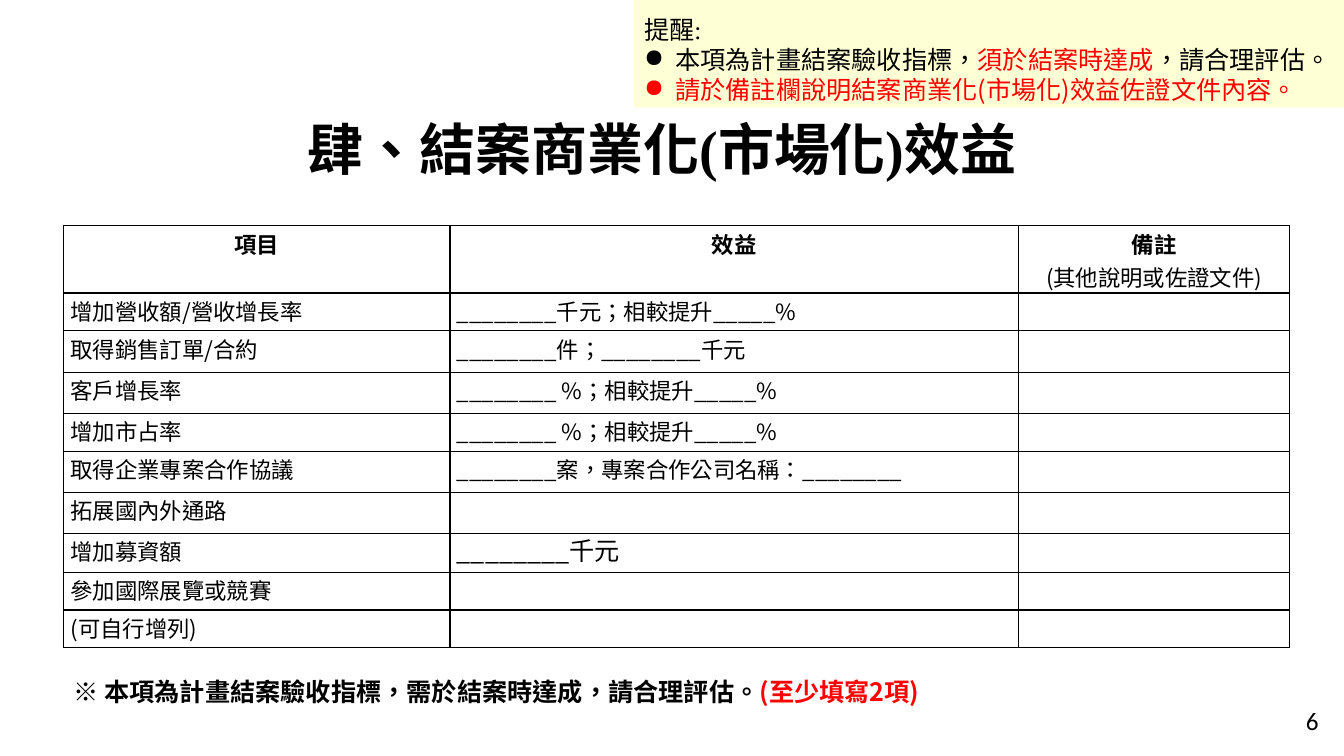
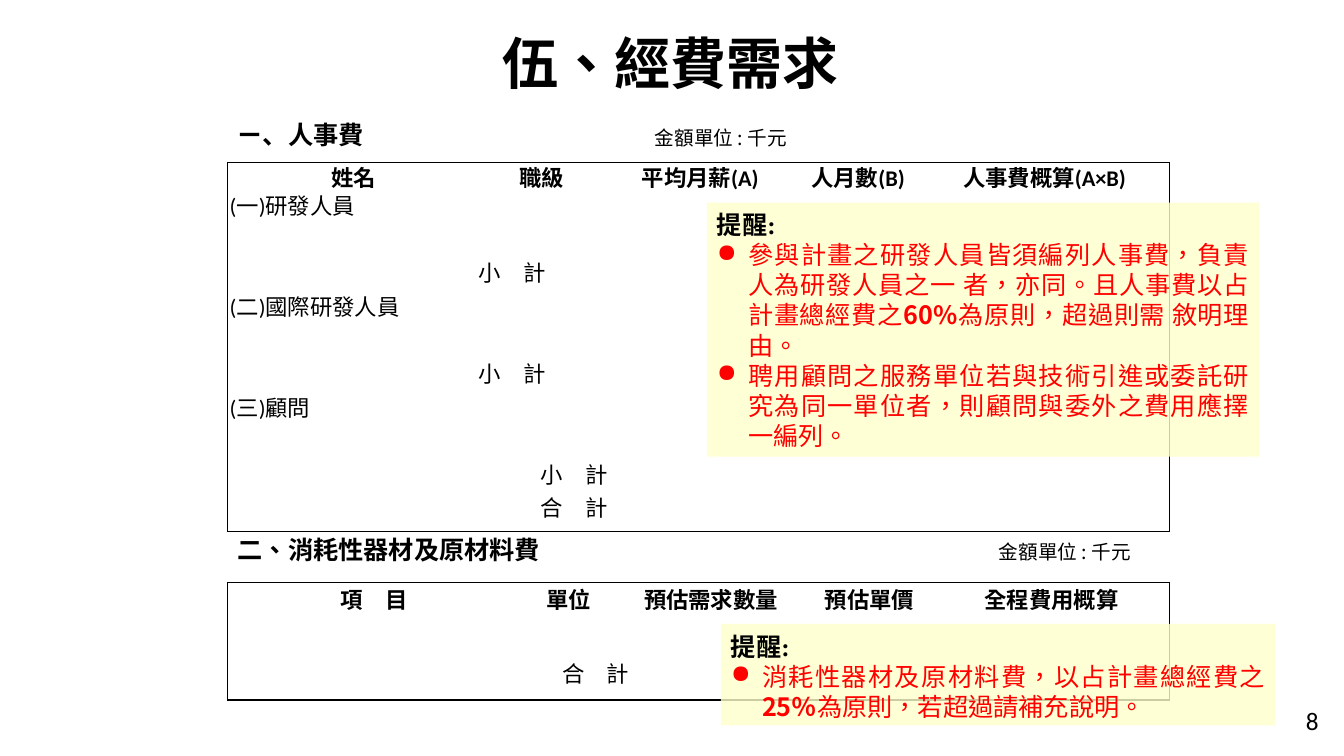
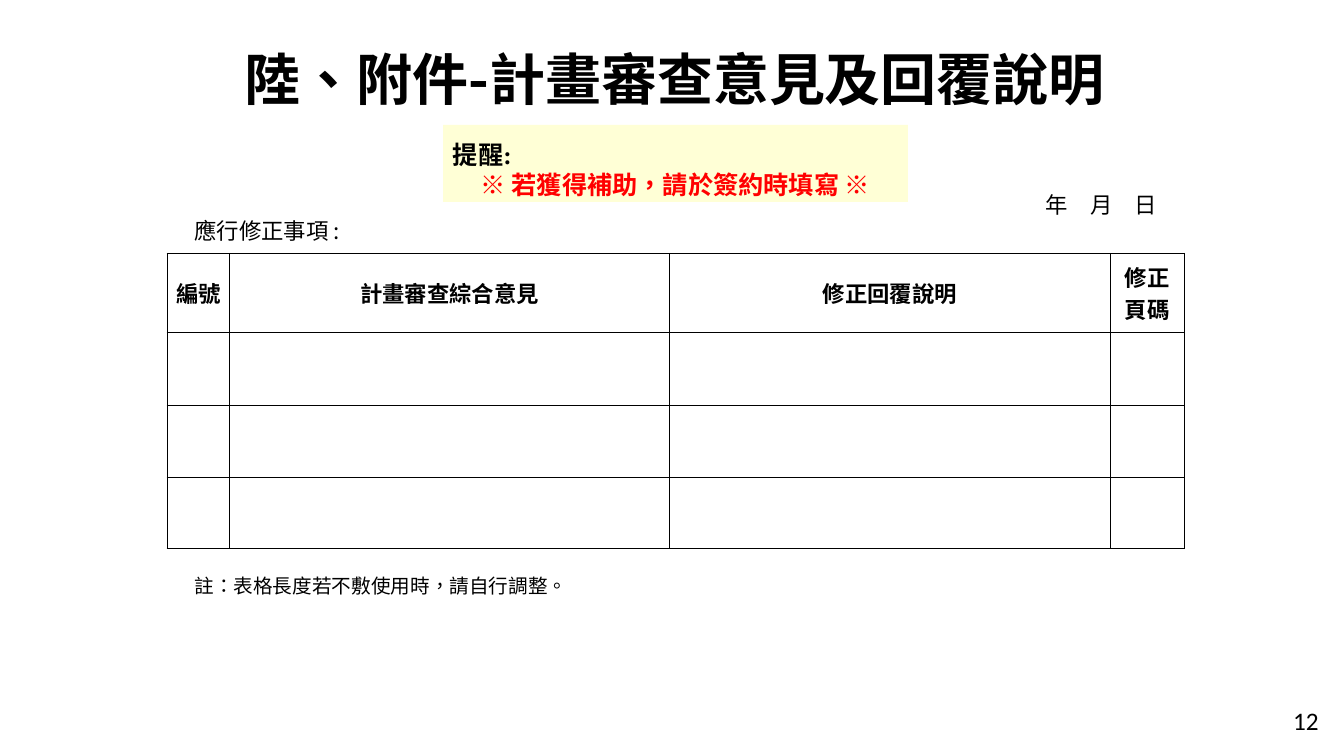
from lxml import etree
from pptx import Presentation
from pptx.dml.color import RGBColor
from pptx.enum.lang import MSO_LANGUAGE_ID
from pptx.enum.shapes import MSO_SHAPE
from pptx.enum.text import MSO_ANCHOR, PP_ALIGN
from pptx.oxml.ns import qn
from pptx.util import Pt

RECT = MSO_SHAPE.RECTANGLE
MIDDLE, TOP = MSO_ANCHOR.MIDDLE, MSO_ANCHOR.TOP
LEFT, CENTER, RIGHT, JUSTIFY = PP_ALIGN.LEFT, PP_ALIGN.CENTER, PP_ALIGN.RIGHT, PP_ALIGN.JUSTIFY
TAIWAN = MSO_LANGUAGE_ID.TRADITIONAL_CHINESE

COLORS = {"black": "000000", "red": "FF0000", "note": "FFFFCC", "white": "FFFFFF"}
NOTO, TIMES, CALIBRI = "Noto Sans CJK SC", "Times New Roman", "Calibri"
STYLES = {
    "title": (40, True, "black", TIMES),
    "title_sans": (40, True, "black", NOTO),
    "strong": (18, True, "black", NOTO),
    "strong_red": (18, True, "red", NOTO),
    "plain": (18, False, "black", NOTO),
    "plain_red": (18, False, "red", NOTO),
    "remind": (18, False, "black", TIMES),
    "remind_bold": (18, True, "black", TIMES),
    "body": (16, False, "black", NOTO),
    "body_bold": (16, True, "black", NOTO),
    "cost": (16, False, "black", CALIBRI),
    "cost_bold": (16, True, "black", CALIBRI),
    "small": (14, False, "black", NOTO),
    "page": (18, False, "black", CALIBRI),
}
FLAT, BULLET = (0, 0), (22.3, -22.3)
NOTE_LINE = 21.5


def write(tf, paras):
    tf.word_wrap = True
    for i, (align, spacing, indent, runs) in enumerate(paras):
        p = tf.paragraphs[0] if i == 0 else tf.add_paragraph()
        p.alignment = align
        if spacing:
            p.line_spacing = Pt(spacing)
        pPr = p._p.get_or_add_pPr()
        pPr.set("marL", str(Pt(indent[0])))
        pPr.set("indent", str(Pt(indent[1])))
        if indent == BULLET:
            etree.SubElement(pPr, qn("a:buChar")).set("char", "●")
        for text, style in runs:
            size, bold, color, font = STYLES[style]
            r = p.add_run()
            r.text = text
            r.font.size = Pt(size)
            r.font.bold = bold
            r.font.color.rgb = RGBColor.from_string(COLORS[color])
            r.font.name = font
            r.font.language_id = TAIWAN
            etree.SubElement(r._r.get_or_add_rPr(), qn("a:ea")).set("typeface", NOTO)


def add_grid(s, box, cols, rows, cells, spans, inset, anchor, full, fill):
    frame = s.shapes.add_table(len(rows), len(cols), *[Pt(v) for v in box])
    table = frame.table
    table.first_row = table.horz_banding = False
    for col, width in zip(table.columns, cols):
        col.width = Pt(width)
    for row, height in zip(table.rows, rows):
        row.height = Pt(height)
    for i in range(len(rows)):
        for j in range(len(cols)):
            cell = table.cell(i, j)
            span = spans.get((i, j), 1)
            if span > 1:
                cell.merge(table.cell(i, j + span - 1))
            cell.margin_left = cell.margin_right = Pt(inset)
            cell.margin_top = cell.margin_bottom = 0
            cell.vertical_anchor = anchor
            edges = {"L": j == 0, "R": j + span == len(cols),
                     "T": i == 0, "B": i == len(rows) - 1}
            for side, outer in edges.items():
                ln = etree.SubElement(cell._tc.get_or_add_tcPr(), qn("a:ln" + side))
                ln.set("w", str(Pt(1)))
                if full or outer:
                    solid = etree.SubElement(ln, qn("a:solidFill"))
                    etree.SubElement(solid, qn("a:srgbClr")).set("val", COLORS["black"])
                else:
                    etree.SubElement(ln, qn("a:noFill"))
            if fill:
                cell.fill.solid()
                cell.fill.fore_color.rgb = RGBColor.from_string(COLORS[fill])
            else:
                cell.fill.background()
            if (i, j) in cells:
                write(cell.text_frame, cells[i, j])


benefits = [
    ("增加營收額/營收增長率", "________千元；相較提升_____%", "body"),
    ("取得銷售訂單/合約", "________件；________千元", "body"),
    ("客戶增長率", "________ %；相較提升_____%", "body"),
    ("增加市占率", "________ %；相較提升_____%", "body"),
    ("取得企業專案合作協議", "________案，專案合作公司名稱：________", "body"),
    ("拓展國內外通路", "", "body"),
    ("增加募資額", "________千元", "plain"),
    ("參加國際展覽或競賽", "", "body"),
    ("(可自行增列)", "", "body"),
]
benefit_cells = {(0, j): [(CENTER, 24, FLAT, [(text, "body_bold")])]
                 for j, text in enumerate(["項目", "效益", "備註"])}
benefit_cells[0, 2].append((CENTER, 24, FLAT, [("(其他說明或佐證文件)", "body")]))
for i, (item, benefit, style) in enumerate(benefits, 1):
    benefit_cells[i, 0] = [(LEFT, 24, FLAT, [(item, "body")])]
    if benefit:
        benefit_cells[i, 1] = [(LEFT, 24, FLAT, [(benefit, style)])]

staff_heads = ["姓名", "職級", "平均月薪(A)", "人月數(B)", "人事費概算(A×B)"]
staff_cells = {(0, j): [(CENTER, 19, (9, 0) if j < 2 else FLAT, [(text, "cost_bold")])]
               for j, text in enumerate(staff_heads)}
staff_spans = {(8, 0): 2}
for i, text, align, span in [
    (1, "(一)研發人員", JUSTIFY, 5), (3, "小　計", CENTER, 3),
    (4, "(二)國際研發人員", JUSTIFY, 5), (6, "小　計", CENTER, 3),
    (7, "(三)顧問", JUSTIFY, 5), (9, "小　計", CENTER, 4), (10, "合　計", CENTER, 4),
]:
    staff_cells[i, 0] = [(align, 12, FLAT, [(text, "cost")])]
    staff_spans[i, 0] = span

material_heads = ["項　目", "單位", "預估需求數量", "預估單價", "全程費用概算"]
material_cells = {(0, j): [(CENTER, 19, FLAT, [(text, "cost_bold")])]
                  for j, text in enumerate(material_heads)}
material_cells[2, 0] = [(CENTER, 12, (21, 0), [("合　計", "cost")])]

review_heads = [["編號"], ["計畫審查綜合意見"], ["修正回覆說明"], ["修正", "頁碼"]]
review_cells = {(0, j): [(CENTER, None, FLAT, [(line, "body_bold")]) for line in lines]
                for j, lines in enumerate(review_heads)}

UNIT = [("金額單位 : 千元", "small")]
slides = [
    {
        "page": "6",
        "texts": [
            ((41, 68, 864, 75), CENTER, [("肆、結案商業化(市場化)效益", "title")]),
            ((45.4, 478, 864, 32), LEFT, [
                ("※ 本項為計畫結案驗收指標，需於結案時達成，請合理評估。", "strong"),
                ("(至少填寫2項)", "strong_red")]),
        ],
        "tables": [
            ((45.4, 161.3, 876, 302), [276, 406, 194],
             [48, 27, 29.5, 29.5, 27, 29.5, 29.5, 27.5, 27, 27],
             benefit_cells, {}, 5, TOP, True, None),
        ],
        "notes": [
            ((453, 0, 507, 77), [
                (LEFT, 28, FLAT, [("提醒:", "remind")]),
                (LEFT, NOTE_LINE, BULLET, [
                    ("本項為計畫結案驗收指標，", "plain"), ("須於結案時達成", "plain_red"),
                    ("，請合理評估。", "plain")]),
                (LEFT, NOTE_LINE, BULLET, [
                    ("請於備註欄說明結案商業化(市場化)效益佐證文件內容。", "plain_red")]),
            ]),
        ],
    },
    {
        "page": "8",
        "texts": [
            ((47, 7, 864, 75), CENTER, [("伍、經費需求", "title")]),
            ((162.7, 81, 280, 30), LEFT, [("ㄧ、人事費", "strong")]),
            ((460.7, 83.5, 140, 30), LEFT, UNIT),
            ((162.7, 377.5, 280, 30), LEFT, [("二、消耗性器材及原材料費", "strong")]),
            ((706.4, 379, 140, 30), LEFT, UNIT),
        ],
        "tables": [
            ((162.7, 116, 672.5, 264), [170.5, 98.5, 137, 88.5, 178], [24] * 11,
             staff_cells, staff_spans, 1.4, MIDDLE, False, None),
            ((162.7, 416, 672.5, 84), [209.5, 68.5, 134.5, 92, 168], [28] * 3,
             material_cells, {(2, 0): 4}, 1.4, MIDDLE, False, None),
        ],
        "notes": [
            ((505, 144.7, 394.5, 181.5), [
                (JUSTIFY, 23, FLAT, [("提醒:", "remind_bold")]),
                (JUSTIFY, NOTE_LINE, BULLET, [
                    ("參與計畫之研發人員皆須編列人事費，負責人為研發人員之一 者，亦同。"
                     "且人事費以占計畫總經費之", "plain_red"),
                    ("60%", "strong_red"), ("為原則，超過則需 敘明理由。", "plain_red")]),
                (JUSTIFY, NOTE_LINE, BULLET, [
                    ("聘用顧問之服務單位若與技術引進或委託研究為同一單位者，"
                     "則顧問與委外之費用應擇一編列。", "plain_red")]),
            ]),
            ((515, 445.7, 396, 72.5), [
                (JUSTIFY, 23, FLAT, [("提醒:", "remind_bold")]),
                (JUSTIFY, NOTE_LINE, BULLET, [
                    ("消耗性器材及原材料費，以占計畫總經費之", "plain_red"),
                    ("25％", "strong_red"), ("為原則，若超過請補充說明。", "plain_red")]),
            ]),
        ],
    },
    {
        "page": "12",
        "texts": [
            ((50, 26, 864, 60), CENTER, [
                ("陸、附件-", "title_sans"), ("計畫審查意見及回覆說明", "title")]),
            ((131.8, 131, 702, 30), RIGHT, [("年　月　日", "body")]),
            ((131.8, 150, 300, 30), LEFT, [("應行修正事項 :", "body")]),
            ((131.8, 403, 500, 30), LEFT, [("註：表格長度若不敷使用時，請自行調整。", "small")]),
        ],
        "tables": [
            ((119.5, 181, 726.5, 211), [44.5, 314.5, 314.5, 53], [56.5, 52, 51.5, 51],
             review_cells, {}, 1.4, MIDDLE, True, "white"),
        ],
        "notes": [
            ((316.5, 89.3, 332, 55), [
                (LEFT, 28, FLAT, [("提醒:", "remind_bold")]),
                (CENTER, NOTE_LINE, FLAT, [("※ 若獲得補助，請於簽約時填寫 ※", "strong_red")]),
            ]),
        ],
    },
]

prs = Presentation()
prs.slide_width, prs.slide_height = Pt(960), Pt(540)
for content in slides:
    s = prs.slides.add_slide(prs.slide_layouts[6])
    page = ((725, 500.4, 224, 28.8), RIGHT, [(content["page"], "page")])
    for box, align, runs in content["texts"] + [page]:
        tf = s.shapes.add_textbox(*[Pt(v) for v in box]).text_frame
        tf.margin_top = tf.margin_bottom = 0
        tf.vertical_anchor = MIDDLE
        write(tf, [(align, None, FLAT, runs)])
    for grid in content["tables"]:
        add_grid(s, *grid)
    for box, paras in content["notes"]:
        note = s.shapes.add_shape(RECT, *[Pt(v) for v in box])
        note.shadow.inherit = False
        note.line.fill.background()
        note.fill.solid()
        note.fill.fore_color.rgb = RGBColor.from_string(COLORS["note"])
        color = note.fill._xPr.find(qn("a:solidFill"))[0]
        etree.SubElement(color, qn("a:alpha")).set("val", "80000")
        note.text_frame.vertical_anchor = TOP
        write(note.text_frame, paras)
prs.save("out.pptx")
